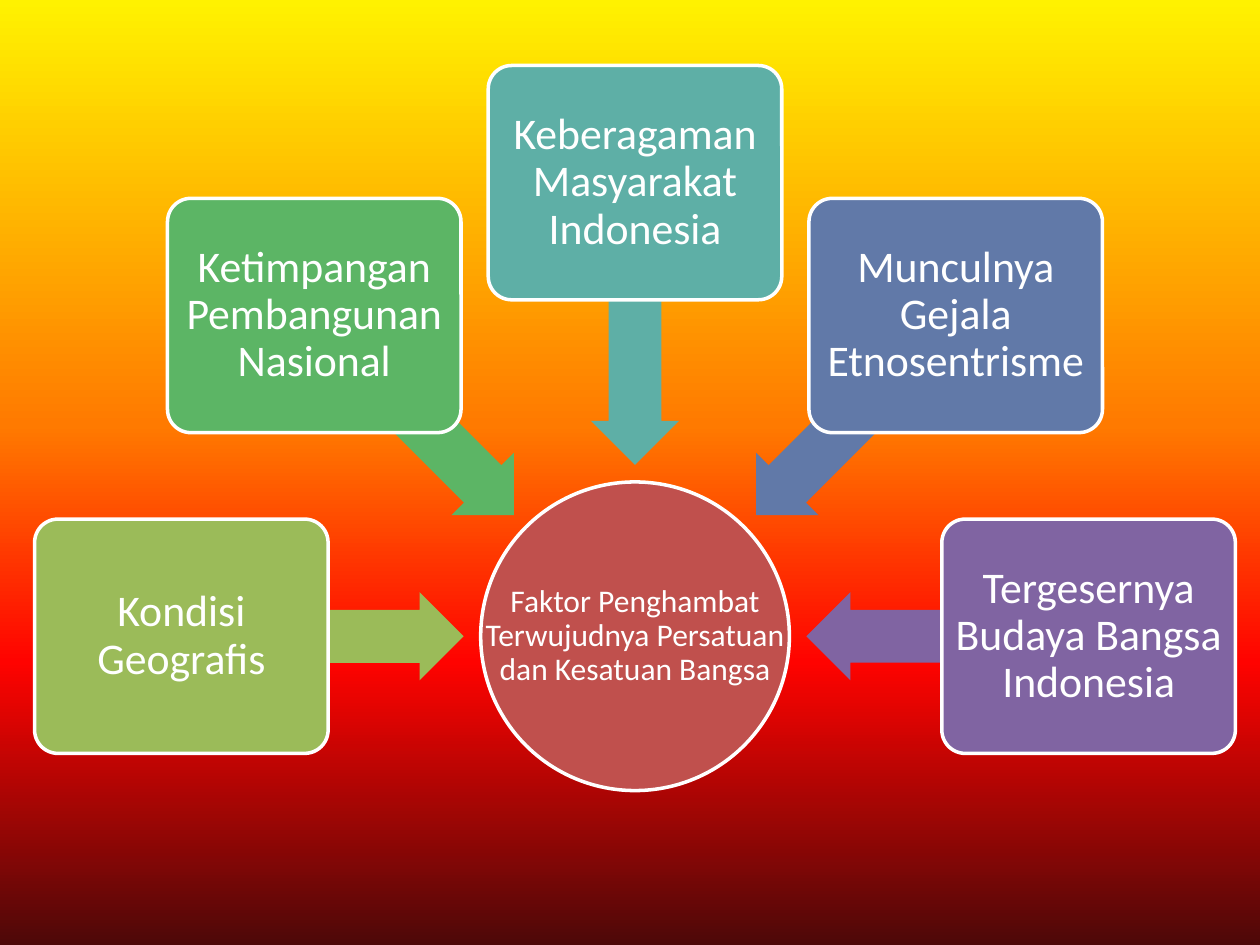
import copy
import math

import pptx
import pptx.dml.color
import pptx.enum.shapes
import pptx.enum.text
import pptx.oxml.ns
import pptx.util

Inches = pptx.util.Inches
SHAPES = pptx.enum.shapes.MSO_SHAPE

HUB_X, HUB_Y = 5.04, 5.05
HUB_SIZE = 2.45
BOX_RADIUS, ARROW_RADIUS = 3.6, 2.48
BOX_SIZE = (2.33, 1.86)
ARROW_SIZE = (2.24, 0.7)
STEP = 45

BACKGROUND = [(0, "FFF200"), (0.45, "FF7A00"), (0.7, "FF0300"), (1, "4D0808")]
HUB_TEXT = "Faktor Penghambat Terwujudnya Persatuan dan Kesatuan Bangsa"
FACTORS = [
    ("Kondisi Geografis", "9BBB59"),
    ("Ketimpangan Pembangunan Nasional", "5CB565"),
    ("Keberagaman Masyarakat Indonesia", "5EAFA6"),
    ("Munculnya Gejala Etnosentrisme", "6179A8"),
    ("Tergesernya Budaya Bangsa Indonesia", "8064A2"),
]


def color(hex_text):
    return pptx.dml.color.RGBColor.from_string(hex_text)


def frame(center, size):
    """Turn a centre and a size in inches into left, top, width, height."""
    (x, y), (width, height) = center, size
    return [Inches(v) for v in (x - width / 2, y - height / 2, width, height)]


def around_hub(radius, degrees):
    """Point at a distance from the hub, clockwise from its left side."""
    angle = math.radians(degrees)
    return HUB_X - radius * math.cos(angle), HUB_Y - radius * math.sin(angle)


def paint_background(page):
    fill = page.background.fill
    fill.gradient()
    fill.gradient_angle = 270
    stop_list = page.element.find(".//" + pptx.oxml.ns.qn("a:gsLst"))
    while len(stop_list) < len(BACKGROUND):
        stop_list.append(copy.deepcopy(stop_list[0]))
    for stop, (position, hex_text) in zip(fill.gradient_stops, BACKGROUND):
        stop.position = position
        stop.color.rgb = color(hex_text)


def add_shape(page, kind, center, size, fill, outlined=True):
    shape = page.shapes.add_shape(kind, *frame(center, size))
    shape.shadow.inherit = False
    shape.fill.solid()
    shape.fill.fore_color.rgb = color(fill)
    if outlined:
        shape.line.color.rgb = color("FFFFFF")
        shape.line.width = pptx.util.Pt(2)
    else:
        shape.line.fill.background()
    return shape


def write_text(box, text, size, inset):
    text_frame = box.text_frame
    text_frame.word_wrap = True
    text_frame.vertical_anchor = pptx.enum.text.MSO_ANCHOR.MIDDLE
    text_frame.margin_left = text_frame.margin_right = Inches(inset)
    text_frame.margin_top = text_frame.margin_bottom = Inches(inset)
    para = text_frame.paragraphs[0]
    para.alignment = pptx.enum.text.PP_ALIGN.CENTER
    para.line_spacing = 0.9
    span = para.add_run()
    span.text = text
    span.font.name = "Calibri"
    span.font.size = pptx.util.Pt(size)
    span.font.color.rgb = color("FFFFFF")


def add_hub(page):
    """Circle with a text box of its full width, wider than its own text area."""
    center, size = (HUB_X, HUB_Y), (HUB_SIZE, HUB_SIZE)
    add_shape(page, SHAPES.OVAL, center, size, "C0504D")
    box = page.shapes.add_textbox(*frame(center, size))
    write_text(box, HUB_TEXT, 18, 0.01)


def add_factor(page, text, fill, degrees):
    arrow = add_shape(page, SHAPES.LEFT_ARROW, around_hub(ARROW_RADIUS, degrees),
                      ARROW_SIZE, fill, outlined=False)
    arrow.adjustments[0] = 0.6
    arrow.adjustments[1] = 0.5
    arrow.rotation = 180 + degrees
    box = add_shape(page, SHAPES.ROUNDED_RECTANGLE, around_hub(BOX_RADIUS, degrees),
                    BOX_SIZE, fill)
    box.adjustments[0] = 0.1
    write_text(box, text, 25, 0)


def main():
    deck = pptx.Presentation()
    deck.slide_width, deck.slide_height = Inches(10), Inches(7.5)
    page = deck.slides.add_slide(deck.slide_layouts[6])
    paint_background(page)
    add_hub(page)
    for index, (text, fill) in enumerate(FACTORS):
        add_factor(page, text, fill, index * STEP)
    deck.save("out.pptx")


if __name__ == "__main__":
    main()
